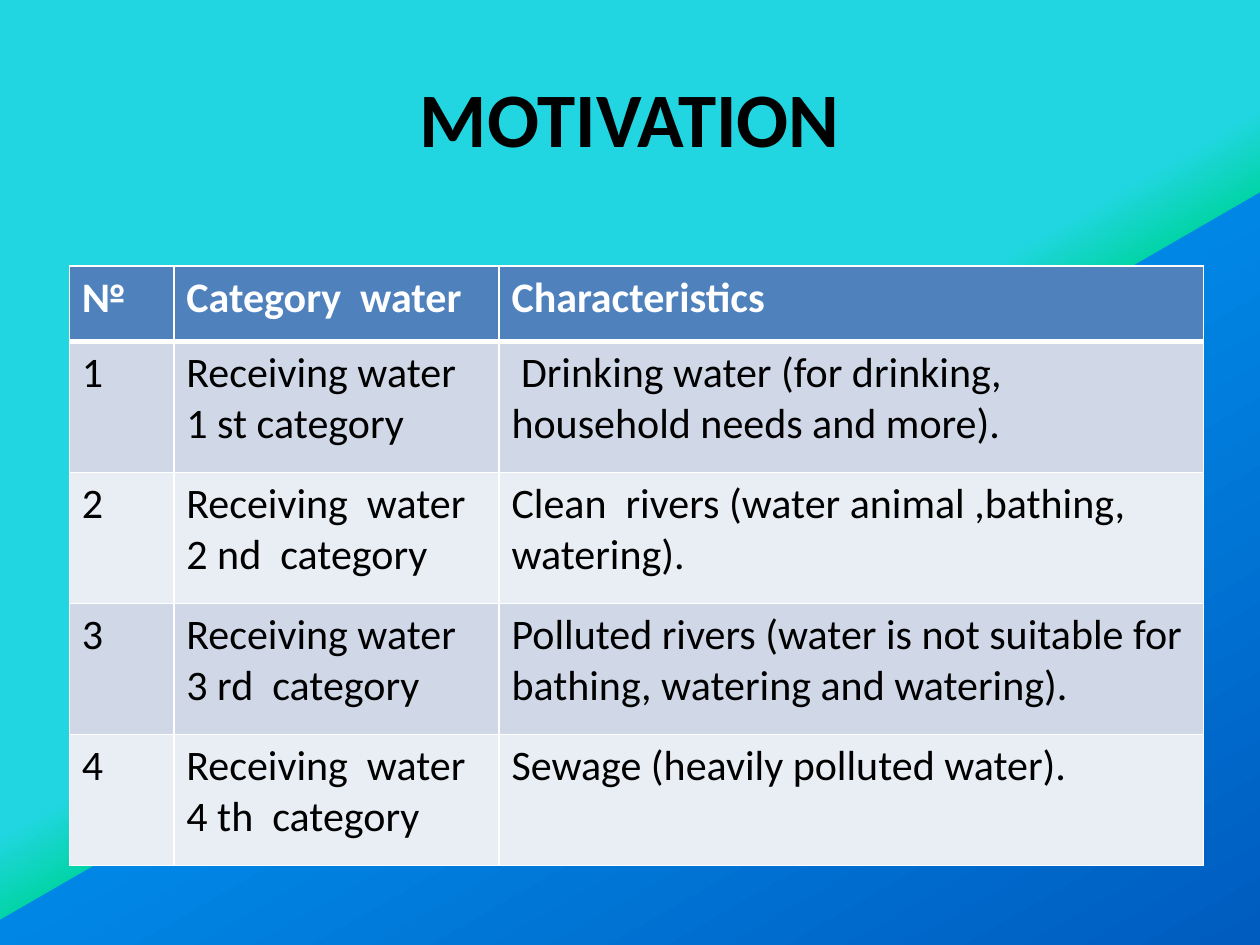
import pptx
import pptx.util
import pptx.dml.color
import pptx.enum.text
from pptx.oxml.ns import qn
from lxml import etree

W, H = 10, 7.5
FONT = "Calibri"
GRADIENT = [(50, "21D6E0"), (55, "03D4A8"), (55, "0087E6"), (100, "005CBF")]
HEADER, BANDS = "4F81BD", ("D0D8E8", "E9EDF4")
COLUMNS = [0.83, 2.58, 5.59]
ROWS = [0.6] + [1.04] * 4
CONTENT = [
    ("№", "Category  water", "Characteristics"),
    ("1", "Receiving water\n1 st category",
     " Drinking water (for drinking, household needs and more)."),
    ("2", "Receiving  water\n2 nd  category",
     "Clean  rivers (water animal ,bathing, watering)."),
    ("3", "Receiving water\n3 rd  category",
     "Polluted rivers (water is not suitable for bathing, watering and watering)."),
    ("4", "Receiving  water\n4 th  category",
     "Sewage (heavily polluted water)."),
]


def inch(value):
    return pptx.util.Inches(value)


def rgb(value):
    return pptx.dml.color.RGBColor.from_string(value)


def add_run(p, text, size, color, bold):
    r = p.add_run()
    r.text = text
    r.font.name = FONT
    r.font.size = pptx.util.Pt(size)
    r.font.bold = bold
    r.font.color.rgb = rgb(color)


def set_background(s):
    fill = s.background.fill
    fill.gradient()
    fill.gradient_angle = 300
    stops = next(s.element.iter(qn("a:gsLst")))
    for old in list(stops):
        stops.remove(old)
    for position, color in GRADIENT:
        stop = etree.SubElement(stops, qn("a:gs"), pos=str(position * 1000))
        etree.SubElement(stop, qn("a:srgbClr"), val=color)


def add_title(s, text):
    sp = s.shapes.add_textbox(inch(0.05 * W), inch(0.04 * H), inch(0.9 * W), inch(1.25))
    tf = sp.text_frame
    tf.word_wrap = True
    tf.vertical_anchor = pptx.enum.text.MSO_ANCHOR.MIDDLE
    p = tf.paragraphs[0]
    p.alignment = pptx.enum.text.PP_ALIGN.CENTER
    add_run(p, text, 44, "000000", True)


def set_borders(cell, **widths):
    tcPr = cell._tc.get_or_add_tcPr()
    for side in "LRTB":
        width = pptx.util.Pt(widths.get(side, 1))
        ln = etree.SubElement(tcPr, qn("a:ln" + side), w=str(width))
        fill = etree.SubElement(ln, qn("a:solidFill"))
        etree.SubElement(fill, qn("a:srgbClr"), val="FFFFFF")


def fill_cell(cell, text, row):
    header = row == 0
    # Heavy rule between header and body; borders precede the fill in the XML
    set_borders(cell, B=3 if header else 1, T=3 if row == 1 else 1)
    cell.fill.solid()
    cell.fill.fore_color.rgb = rgb(HEADER if header else BANDS[(row - 1) % 2])
    tf = cell.text_frame
    for i, line in enumerate(text.split("\n")):
        p = tf.add_paragraph() if i else tf.paragraphs[0]
        add_run(p, line, 24, "FFFFFF" if header else "000000", header)


def add_water_table(s):
    frame = s.shapes.add_table(len(ROWS), len(COLUMNS), inch(0.55), inch(2.11),
                               inch(sum(COLUMNS)), inch(sum(ROWS)))
    table = frame.table
    for column, width in zip(table.columns, COLUMNS):
        column.width = inch(width)
    for row, height in zip(table.rows, ROWS):
        row.height = inch(height)
    for i, texts in enumerate(CONTENT):
        for j, text in enumerate(texts):
            fill_cell(table.cell(i, j), text, i)


def main():
    prs = pptx.Presentation()
    prs.slide_width, prs.slide_height = inch(W), inch(H)
    s = prs.slides.add_slide(prs.slide_layouts[6])
    set_background(s)
    add_title(s, "MOTIVATION")
    add_water_table(s)
    prs.save("out.pptx")


if __name__ == "__main__":
    main()
